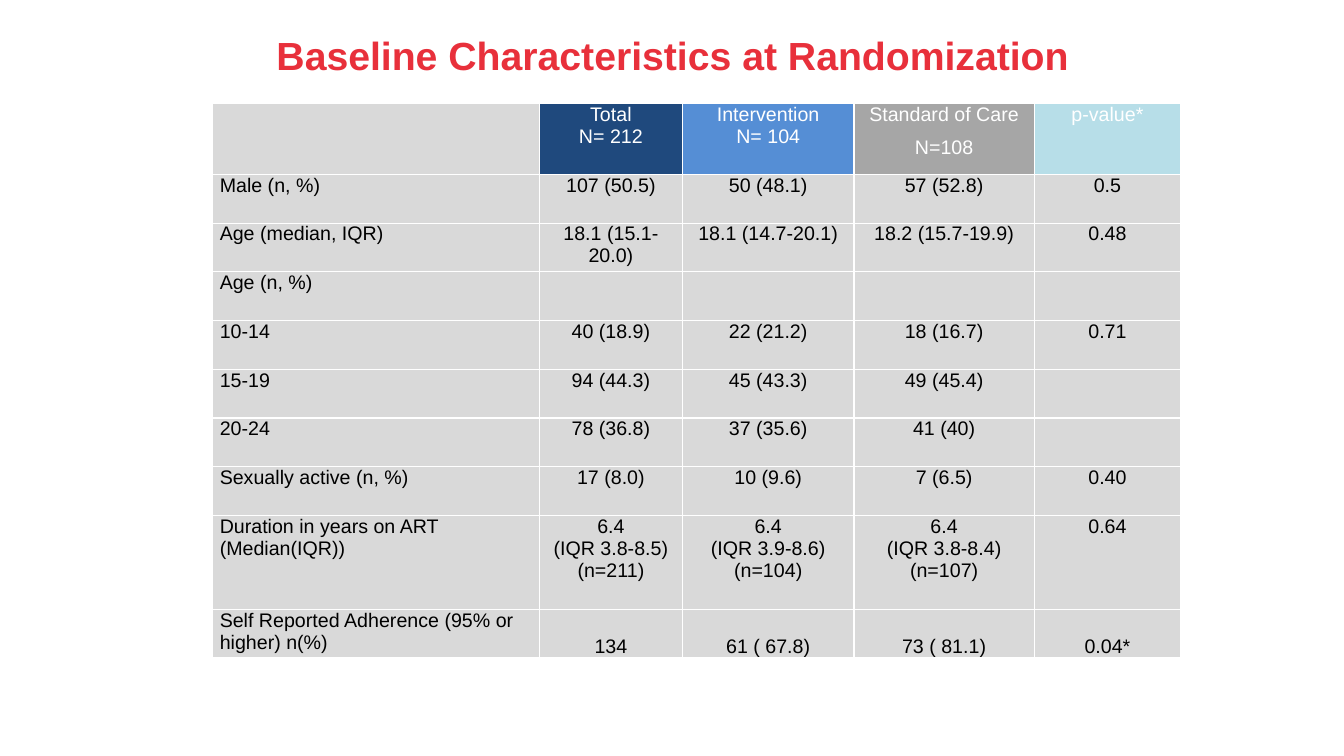
from dataclasses import dataclass

from lxml.etree import SubElement
from pptx import Presentation
from pptx.dml.color import RGBColor as RGB
from pptx.enum.text import MSO_ANCHOR as Anchor, PP_ALIGN as Align
from pptx.oxml.ns import qn
from pptx.util import Inches, Pt


@dataclass(frozen=True)
class Theme:
    font: str = "Arial"
    title: str = "E8303B"
    body: str = "000000"
    light: str = "FFFFFF"
    cell: str = "D9D9D9"
    heads: tuple = ("D9D9D9", "1F497D", "558ED5", "A6A6A6", "B7DEE8")
    big: int = 28
    small: int = 14


THEME = Theme()
COLS = (3.24, 1.42, 1.7, 1.79, 1.45)
HEAD, TALL = 0.7, 0.93
ROWS = (
    ("", "Total\nN= 212", "Intervention\nN= 104", "Standard of Care\nN=108", "p-value*"),
    ("Male (n, %)", "107 (50.5)", "50 (48.1)", "57 (52.8)", "0.5"),
    ("Age (median, IQR)", "18.1 (15.1-20.0)", "18.1 (14.7-20.1)",
     "18.2 (15.7-19.9)", "0.48"),
    ("Age (n, %)", "", "", "", ""),
    ("10-14", "40 (18.9)", "22 (21.2)", "18 (16.7)", "0.71"),
    ("15-19", "94 (44.3)", "45 (43.3)", "49 (45.4)", ""),
    ("20-24", "78 (36.8)", "37 (35.6)", "41 (40)", ""),
    ("Sexually active (n, %)", "17 (8.0)", "10 (9.6)", "7 (6.5)", "0.40"),
    ("Duration in years on ART (Median(IQR))", "6.4\n(IQR 3.8-8.5)\n(n=211)",
     "6.4\n(IQR 3.9-8.6)\n(n=104)", "6.4\n(IQR 3.8-8.4)\n(n=107)", "0.64"),
    ("Self Reported Adherence (95% or higher) n(%)", "134", "61 ( 67.8)",
     "73 ( 81.1)", "0.04*"),
)
LAST = len(ROWS) - 1


def style(para, size, color, align, bold=False):
    para.alignment = align
    font = para.font
    font.name, font.size, font.bold = THEME.font, Pt(size), bold
    font.color.rgb = RGB.from_string(color)


def add_title(slide, text, left, top, width, height):
    title = slide.shapes.title
    title.left, title.top = Inches(left), Inches(top)
    title.width, title.height = Inches(width), Inches(height)
    frame = title.text_frame
    frame.text = text
    frame.vertical_anchor = Anchor.MIDDLE
    style(frame.paragraphs[0], THEME.big, THEME.title, Align.CENTER, True)


def add_edges(cell):
    """Draw a thin light line on all four sides; call before filling."""
    props = cell._tc.get_or_add_tcPr()
    for side in ("lnL", "lnR", "lnT", "lnB"):
        line = SubElement(props, qn(f"a:{side}"), w=str(Pt(1)))
        fill = SubElement(line, qn("a:solidFill"))
        SubElement(fill, qn("a:srgbClr"), val=THEME.light)


def fill_cell(cell, text, row, col):
    add_edges(cell)
    cell.fill.solid()
    cell.fill.fore_color.rgb = RGB.from_string(
        THEME.cell if row else THEME.heads[col])
    cell.margin_left = cell.margin_right = Inches(0.07)
    cell.margin_top = cell.margin_bottom = 0
    low = row == LAST and col
    cell.vertical_anchor = Anchor.BOTTOM if low else Anchor.TOP
    cell.text = text
    paras = cell.text_frame.paragraphs
    for para in paras:
        style(para, THEME.small, THEME.body if row else THEME.light,
              Align.CENTER if col else Align.LEFT)
    if row == 0 and col == 3:
        paras[0].space_after = Pt(8)


def add_grid(slide, left, top, width, height):
    frame = slide.shapes.add_table(len(ROWS), len(COLS), Inches(left),
                                   Inches(top), Inches(width), Inches(height))
    table = frame.table
    table.first_row = table.horz_banding = False
    for col, size in zip(table.columns, COLS):
        col.width = Inches(size)
    plain = (height - HEAD - TALL) / (len(ROWS) - 2)
    tall = {0: HEAD, LAST - 1: TALL}
    for row, texts in enumerate(ROWS):
        table.rows[row].height = Inches(tall.get(row, plain))
        for col, text in enumerate(texts):
            fill_cell(table.cell(row, col), text, row, col)


def main():
    deck = Presentation()
    deck.slide_width, deck.slide_height = Inches(13.33), Inches(7.5)
    slide = deck.slides.add_slide(deck.slide_layouts[5])
    add_title(slide, "Baseline Characteristics at Randomization",
              0.67, 0.1, 12, 0.88)
    add_grid(slide, 2.11, 1.03, sum(COLS), 5.5)
    deck.save("out.pptx")


if __name__ == "__main__":
    main()
